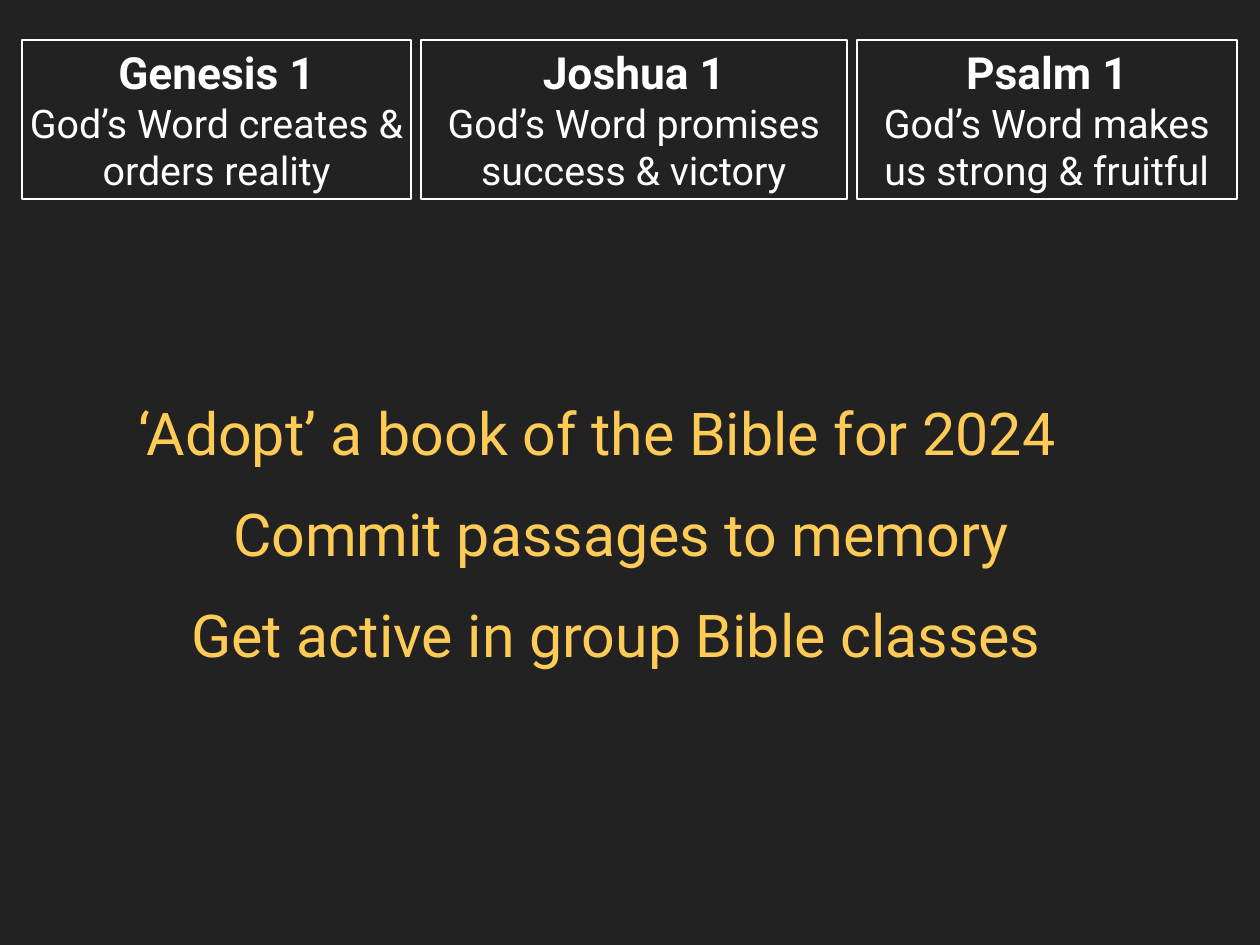
"""Build a slide of three Bible chapter cards above three calls to action."""
import pptx
import pptx.dml.color
import pptx.enum.shapes
import pptx.enum.text
import pptx.util
from pptx.util import Inches

COLORS = {"background": "222222", "white": "FFFFFF", "gold": "FDCB56"}
FONT = "Roboto"
CARD_GAP = 0.11
CARDS = [
    (4.39, "Genesis 1", "God’s Word creates & orders reality"),
    (4.81, "Joshua 1", "God’s Word promises success & victory"),
    (4.29, "Psalm 1", "God’s Word makes us strong & fruitful"),
]
ACTION_HEIGHT = 1.03
ACTION_PITCH = 1.14
ACTIONS = [
    (0, 11.22, "‘Adopt’ a book of the Bible for 2024"),
    (1.07, 9.08, "Commit passages to memory"),
    (0.6, 10.02, "Get active in group Bible classes"),
]


def color(name):
    """Return the named palette colour."""
    return pptx.dml.color.RGBColor.from_string(COLORS[name])


def prepare_frame(shape):
    """Give a shape's text narrow margins, wrapping and a middle anchor."""
    frame = shape.text_frame
    frame.word_wrap = True
    frame.vertical_anchor = pptx.enum.text.MSO_ANCHOR.MIDDLE
    frame.margin_left = frame.margin_right = Inches(0.06)
    frame.margin_top = frame.margin_bottom = Inches(0.06)
    return frame


def write(paragraph, text, size, color_name, alignment, bold=False):
    """Fill a paragraph with text in one style."""
    paragraph.text = text
    paragraph.alignment = alignment
    font = paragraph.font
    font.name = FONT
    font.size = pptx.util.Pt(size)
    font.bold = bold
    font.color.rgb = color(color_name)


def add_cards(slide, left, top, height):
    """Place the outlined chapter cards in a row."""
    center = pptx.enum.text.PP_ALIGN.CENTER
    for width, chapter, message in CARDS:
        card = slide.shapes.add_shape(
            pptx.enum.shapes.MSO_SHAPE.RECTANGLE,
            Inches(left), Inches(top), Inches(width), Inches(height))
        card.shadow.inherit = False
        card.fill.solid()
        card.fill.fore_color.rgb = color("background")
        card.line.color.rgb = color("white")
        card.line.width = pptx.util.Pt(2)
        frame = prepare_frame(card)
        write(frame.paragraphs[0], chapter, 36, "white", center, bold=True)
        write(frame.add_paragraph(), message, 32, "white", center)
        left += width + CARD_GAP


def add_actions(slide, left, top):
    """Stack the calls to action, each with its own indent."""
    for row, (indent, width, text) in enumerate(ACTIONS):
        box = slide.shapes.add_textbox(
            Inches(left + indent), Inches(top + row * ACTION_PITCH),
            Inches(width), Inches(ACTION_HEIGHT))
        write(prepare_frame(box).paragraphs[0], text, 48, "gold",
              pptx.enum.text.PP_ALIGN.LEFT)


def main():
    """Build and save the presentation."""
    presentation = pptx.Presentation()
    presentation.slide_width = Inches(14.22)
    presentation.slide_height = Inches(10.67)
    slide = presentation.slides.add_slide(presentation.slide_layouts[6])
    slide.background.fill.solid()
    slide.background.fill.fore_color.rgb = color("background")
    add_cards(slide, left=0.25, top=0.45, height=1.8)
    add_actions(slide, left=1.5, top=4.36)
    presentation.save("out.pptx")


if __name__ == "__main__":
    main()
